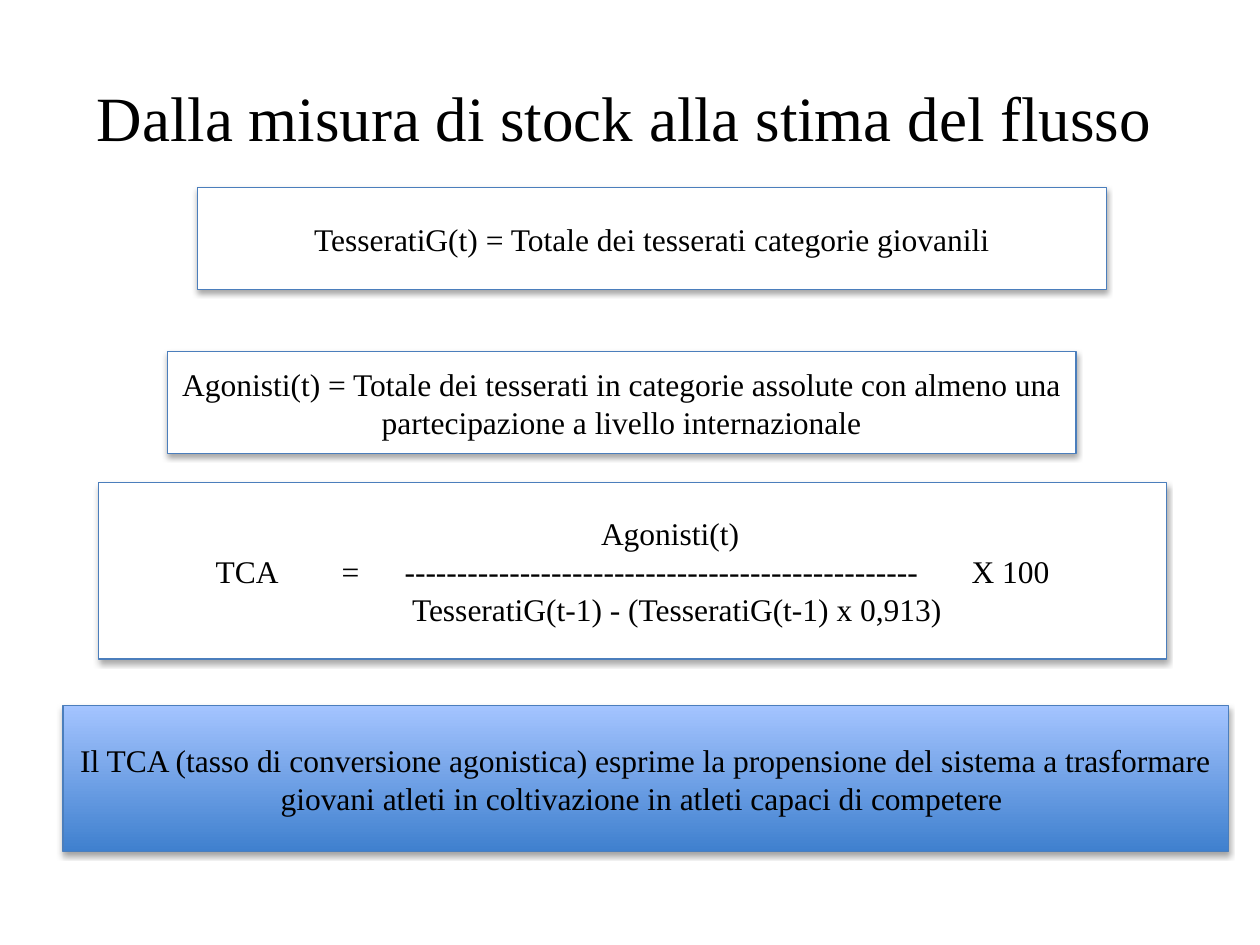
from lxml.etree import SubElement
from pptx import Presentation
from pptx.dml.color import RGBColor
from pptx.enum.shapes import MSO_SHAPE as Shape
from pptx.enum.text import MSO_ANCHOR as Anchor, PP_ALIGN as Align
from pptx.oxml.ns import qn
from pptx.util import Inches, Pt

THEME = {
    "font": "Times New Roman",
    "title_size": 36,
    "body_size": 18,
    "text": "000000",
    "white": "FFFFFF",
    "line": "4B7EBC",
    "gradient": ("3F80CE", "A4C4FF"),  # bottom, top
    "shadow": "000000",
}

TITLE = "Dalla misura di stock alla stima del flusso"
TITLE_PLACE = (0.16, 0.3, 9.59, 1.25)

# (left, top, width, height), paragraphs, highlighted
BOXES = [
    ((1.57, 1.49, 7.21, 0.81),
     ["TesseratiG(t) = Totale dei tesserati categorie giovanili"], False),
    ((1.33, 2.79, 7.21, 0.81),
     ["Agonisti(t) = Totale dei tesserati in categorie assolute con almeno una "
      "partecipazione a livello internazionale"], False),
    ((0.78, 3.83, 8.48, 1.4),
     ["\t\tAgonisti(t)\t",
      "TCA\t=\t" + "-" * 49 + "\tX 100",
      "\t\tTesseratiG(t-1) - (TesseratiG(t-1) x 0,913)\t"], False),
    ((0.5, 5.6, 9.25, 1.16),
     ["Il TCA (tasso di conversione agonistica) esprime la propensione del sistema "
      "a trasformare giovani atleti in coltivazione in atleti capaci di competere "],
     True),
]


def color(name):
    return RGBColor.from_string(THEME[name])


def write(shape, lines, size):
    frame = shape.text_frame
    frame.word_wrap = True
    frame.vertical_anchor = Anchor.MIDDLE
    for index, line in enumerate(lines):
        para = frame.paragraphs[0] if index == 0 else frame.add_paragraph()
        para.alignment = Align.CENTER
        # Half-inch tab stops line up the parts of the formula
        para._p.get_or_add_pPr().set("defTabSz", str(Inches(0.5)))
        span = para.add_run()
        span.text = line
        span.font.name = THEME["font"]
        span.font.size = Pt(size)
        span.font.color.rgb = color("text")


def add_shadow(shape):
    shape.shadow.inherit = False
    effects = shape._element.spPr.find(qn("a:effectLst"))
    shadow = SubElement(effects, qn("a:outerShdw"), blurRad=str(Pt(3.1)),
                        dist=str(Pt(1.8)), dir=str(90 * 60000), rotWithShape="0")
    tone = SubElement(shadow, qn("a:srgbClr"), val=THEME["shadow"])
    SubElement(tone, qn("a:alpha"), val="35000")


def add_box(page, place, lines, highlighted):
    box = page.shapes.add_shape(Shape.RECTANGLE, *map(Inches, place))
    if highlighted:
        box.fill.gradient()
        box.fill.gradient_angle = 90
        for stop, tone in zip(box.fill.gradient_stops, THEME["gradient"]):
            stop.color.rgb = RGBColor.from_string(tone)
    else:
        box.fill.solid()
        box.fill.fore_color.rgb = color("white")
    box.line.color.rgb = color("line")
    box.line.width = Pt(0.75)
    add_shadow(box)
    write(box, lines, THEME["body_size"])


def main():
    deck = Presentation()
    deck.slide_width, deck.slide_height = Inches(10), Inches(7.5)
    page = deck.slides.add_slide(deck.slide_layouts.get_by_name("Title Only"))

    title = page.shapes.title
    title.left, title.top, title.width, title.height = map(Inches, TITLE_PLACE)
    write(title, [TITLE], THEME["title_size"])

    for place, lines, highlighted in BOXES:
        add_box(page, place, lines, highlighted)
    deck.save("out.pptx")


if __name__ == "__main__":
    main()
